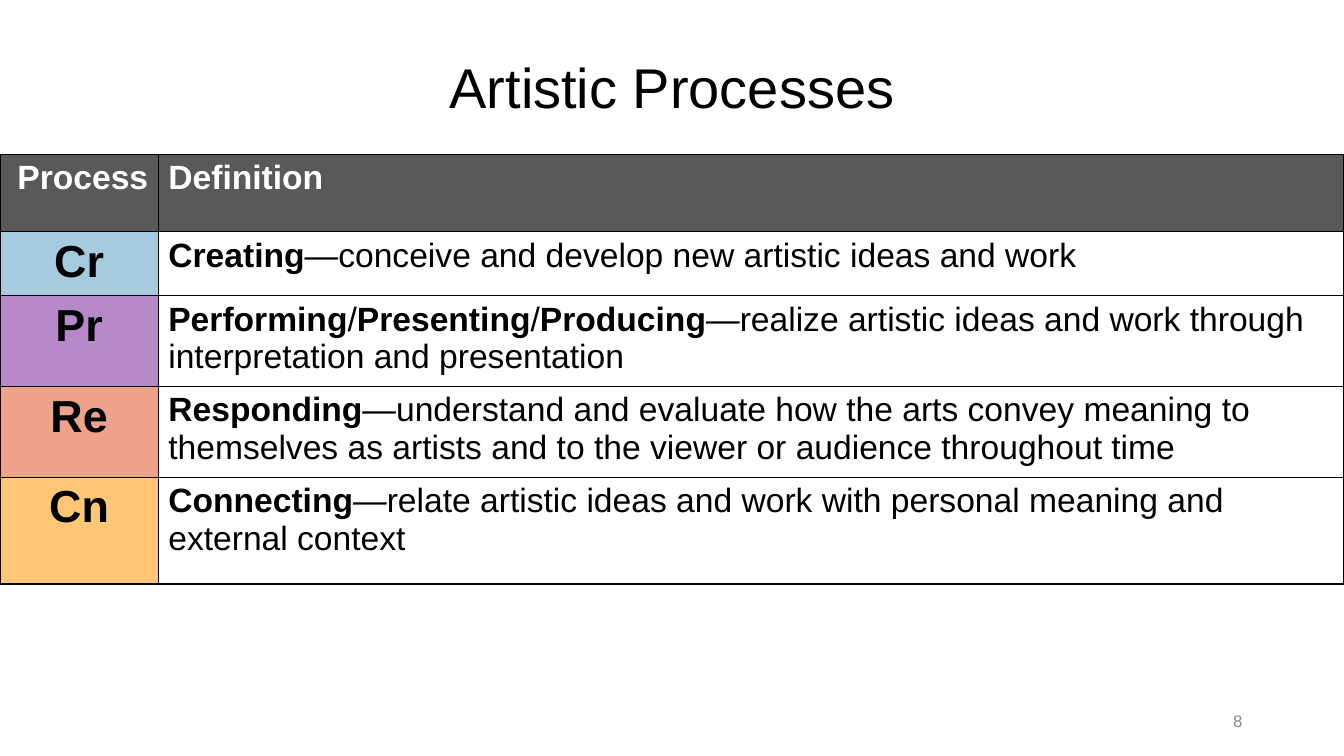
from lxml.etree import SubElement
from pptx import Presentation
from pptx.dml.color import RGBColor
from pptx.enum.text import MSO_ANCHOR, PP_ALIGN
from pptx.oxml.ns import qn
from pptx.util import Inches, Pt

LEFT, MID, RIGHT = PP_ALIGN.LEFT, PP_ALIGN.CENTER, PP_ALIGN.RIGHT
WIDE = 13.33
ROWS = [
    ("Cr", "A6CADE", 0.6, ["Creating"],
     "conceive and develop new artistic ideas and work"),
    ("Pr", "B789C9", 0.82, ["Performing", "Presenting", "Producing"],
     "realize artistic ideas and work through interpretation and presentation"),
    ("Re", "EEA28A", 0.81, ["Responding"],
     "understand and evaluate how the arts convey meaning to themselves "
     "as artists and to the viewer or audience throughout time"),
    ("Cn", "FFC775", 1.06, ["Connecting"],
     "relate artistic ideas and work with personal meaning and external context"),
]


def color(code):
    """Turn a hex string into a colour."""
    return RGBColor.from_string(code)


def write(frame, *runs, size=24, tint="000000", align=LEFT, after=0, lead=None):
    """Fill a frame with one paragraph of (text, style) runs."""
    para = frame.paragraphs[0]
    para.alignment = align
    para.space_after = Pt(after)
    if lead:
        para.line_spacing = lead
    for text, style in runs:
        run = para.add_run()
        run.text = text
        font = run.font
        font.name, font.size = "Arial", Pt(size)
        font.bold, font.italic = "b" in style, "i" in style
        font.color.rgb = color(tint)


def label(slide, box, text, **form):
    """Place a vertically centred text box."""
    frame = slide.shapes.add_textbox(*map(Inches, box)).text_frame
    frame.word_wrap = True
    frame.vertical_anchor = MSO_ANCHOR.MIDDLE
    write(frame, (text, ""), **form)


def dress(cell, fill):
    """Give a cell black borders and a fill."""
    props = cell._tc.get_or_add_tcPr()
    for side in ("lnL", "lnR", "lnT", "lnB"):
        line = SubElement(props, qn(f"a:{side}"), w=str(Pt(1)))
        paint = SubElement(line, qn("a:solidFill"))
        SubElement(paint, qn("a:srgbClr"), val="000000")
    cell.fill.solid()
    cell.fill.fore_color.rgb = color(fill)


def grid(slide, left, top, width):
    """Draw the table of processes and their definitions."""
    highs = [0.77] + [row[2] for row in ROWS]
    box = map(Inches, (left, top, width, sum(highs)))
    table = slide.shapes.add_table(len(highs), 2, *box).table
    first = 1.57
    for col, size in zip(table.columns, (first, width - first)):
        col.width = Inches(size)
    for row, high in zip(table.rows, highs):
        row.height = Inches(high)
    for col, (text, align) in enumerate((("Process", RIGHT), ("Definition", LEFT))):
        cell = table.cell(0, col)
        dress(cell, "595959")
        write(cell.text_frame, (text, "b"), tint="FFFFFF", align=align)
    for num, (code, fill, _, names, text) in enumerate(ROWS, 1):
        key, body = table.cell(num, 0), table.cell(num, 1)
        dress(key, fill)
        dress(body, "FFFFFF")
        write(key.text_frame, (code, "b"), size=32, tint="000104", align=MID)
        runs = [(names[0], "b")]
        for name in names[1:]:
            runs += [("/", ""), (name, "b")]
        write(body.text_frame, *runs, ("—", "i"), (text, ""), after=18)


def main():
    """Build and save the slide."""
    deck = Presentation()
    deck.slide_width, deck.slide_height = Inches(WIDE), Inches(7.5)
    slide = deck.slides.add_slide(deck.slide_layouts[6])
    label(slide, (0, 0.23, WIDE, 1.33), "Artistic Processes",
          size=40, align=MID, lead=0.9)
    grid(slide, 0, 1.53, WIDE)
    label(slide, (9.42, 6.95, 3, 0.4), "8", size=12, tint="8C8C8C", align=RIGHT)
    deck.save("out.pptx")


if __name__ == "__main__":
    main()
